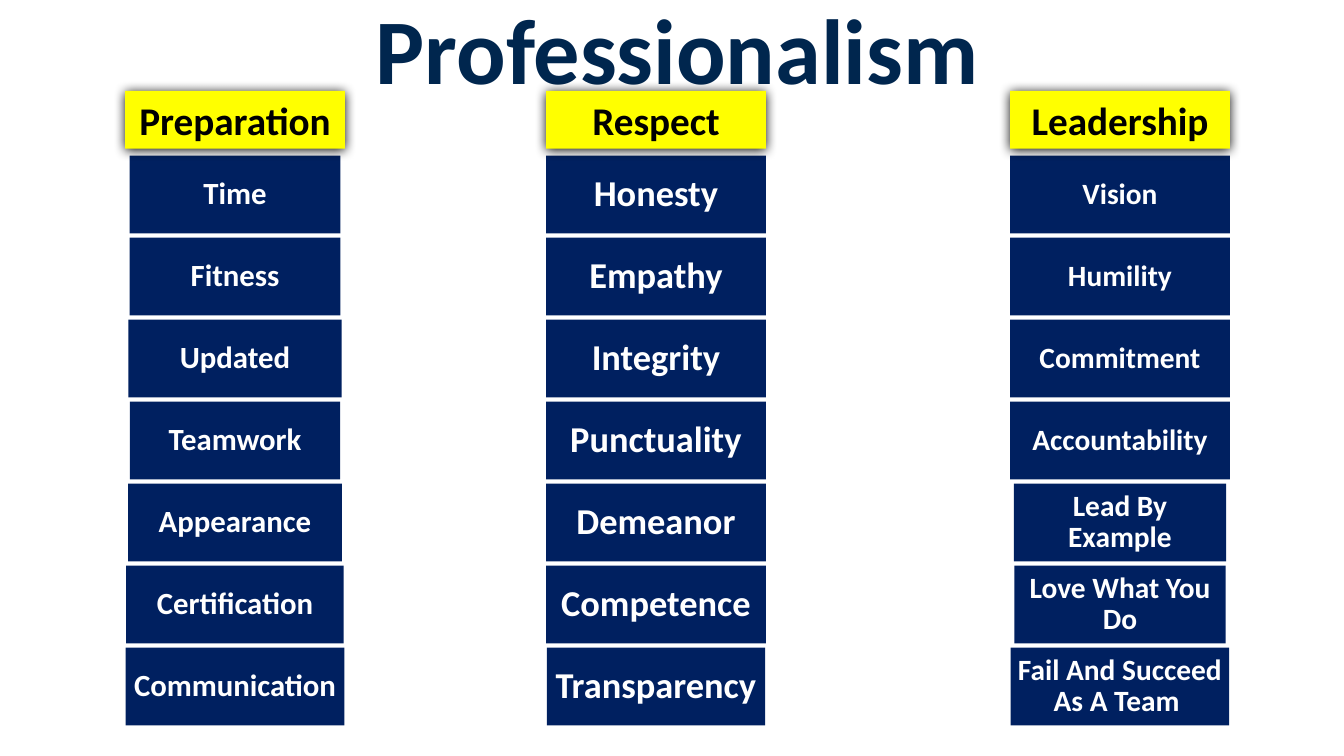
from dataclasses import dataclass

from lxml import etree
from pptx import Presentation
from pptx.dml.color import RGBColor
from pptx.enum.shapes import MSO_SHAPE
from pptx.enum.text import MSO_ANCHOR, PP_ALIGN
from pptx.oxml import parse_xml
from pptx.oxml.ns import nsdecls, qn
from pptx.util import Pt

RECTANGLE = MSO_SHAPE.RECTANGLE
CENTER = PP_ALIGN.CENTER
TOP, MIDDLE = MSO_ANCHOR.TOP, MSO_ANCHOR.MIDDLE


@dataclass(frozen=True)
class Theme:
    font: str = "Calibri"
    title: RGBColor = RGBColor(0x00, 0x26, 0x4E)
    tile: RGBColor = RGBColor(0x00, 0x20, 0x60)
    tile_text: RGBColor = RGBColor(0xFF, 0xFF, 0xFF)
    heading: RGBColor = RGBColor(0xFF, 0xFF, 0x00)
    heading_text: RGBColor = RGBColor(0x00, 0x00, 0x00)
    title_size: int = 66
    heading_size: int = 28


THEME = Theme()

SLIDE_SIZE = (960, 540)
HEADING_TOP, HEADING_WIDTH, HEADING_HEIGHT = 64.9, 157, 41.2
TILE_TOP, TILE_HEIGHT, TILE_PITCH = 111.1, 55.7, 58.57

# Heading, centre of the column, text size, tiles as (wording, width)
COLUMNS = [
    ("Preparation", 167.9, 22, [
        ("Time", 150.6), ("Fitness", 150.6), ("Updated", 152.4),
        ("Teamwork", 150.3), ("Appearance", 152.8),
        ("Certification", 155.4), ("Communication", 156.2)]),
    ("Respect", 468.6, 26, [
        ("Honesty", 157), ("Empathy", 157), ("Integrity", 157),
        ("Punctuality", 157), ("Demeanor", 157),
        ("Competence", 157), ("Transparency", 156)]),
    ("Leadership", 800, 21, [
        ("Vision", 157), ("Humility", 157), ("Commitment", 157),
        ("Accountability", 157), ("Lead By Example", 151.6),
        ("Love What You Do", 151), ("Fail And Succeed As A Team ", 156.2)]),
]


def write_text(holder, text, *, size, color, anchor=MIDDLE, spacing=1.0, inset=None):
    """Fill a shape or box with one centred bold paragraph."""
    frame = holder.text_frame
    frame.word_wrap = True
    frame.vertical_anchor = anchor
    if inset is not None:
        frame.margin_left = frame.margin_right = Pt(inset)
        frame.margin_top = frame.margin_bottom = Pt(inset)
    paragraph = frame.paragraphs[0]
    paragraph.alignment = CENTER
    paragraph.line_spacing = spacing
    run = paragraph.add_run()
    run.text = text
    run.font.name = THEME.font
    run.font.size = Pt(size)
    run.font.bold = True
    run.font.color.rgb = color


def add_block(shapes, center, top, width, height, color):
    """Add a plain rectangle centred on a column's axis."""
    block = shapes.add_shape(RECTANGLE, Pt(center - width / 2), Pt(top),
                             Pt(width), Pt(height))
    block.shadow.inherit = False
    block.fill.solid()
    block.fill.fore_color.rgb = color
    block.line.fill.background()
    return block


def add_glow_shadow(block):
    """Give the block a soft black shadow just below it."""
    effects = block._element.spPr.find(qn("a:effectLst"))
    shadow = parse_xml(
        f'<a:outerShdw {nsdecls("a")} blurRad="{Pt(8.5)}" dist="{Pt(1)}" '
        'dir="5400000" algn="t" rotWithShape="0"/>')
    etree.SubElement(shadow, qn("a:srgbClr"), val="000000")
    effects.append(shadow)


def add_title(slide, text):
    title = slide.shapes.add_textbox(Pt(89.4), Pt(0), Pt(789), Pt(45.4))
    write_text(title, text, size=THEME.title_size, color=THEME.title,
               anchor=TOP, spacing=0.9)


def add_tiles(slide, center, size, tiles):
    column = slide.shapes.add_group_shape()
    for row, (text, width) in enumerate(tiles):
        tile = add_block(column.shapes, center, TILE_TOP + row * TILE_PITCH,
                         width, TILE_HEIGHT, THEME.tile)
        write_text(tile, text, size=size, color=THEME.tile_text,
                   spacing=0.9, inset=size * 0.2)


def add_heading(slide, center, text):
    heading = add_block(slide.shapes, center, HEADING_TOP, HEADING_WIDTH,
                        HEADING_HEIGHT, THEME.heading)
    add_glow_shadow(heading)
    write_text(heading, text, size=THEME.heading_size, color=THEME.heading_text)


def main():
    deck = Presentation()
    deck.slide_width, deck.slide_height = map(Pt, SLIDE_SIZE)
    slide = deck.slides.add_slide(deck.slide_layouts[6])
    for _, center, size, tiles in COLUMNS:
        add_tiles(slide, center, size, tiles)
    add_title(slide, "Professionalism")
    for heading, center, *_ in COLUMNS:
        add_heading(slide, center, heading)
    deck.save("out.pptx")


if __name__ == "__main__":
    main()
